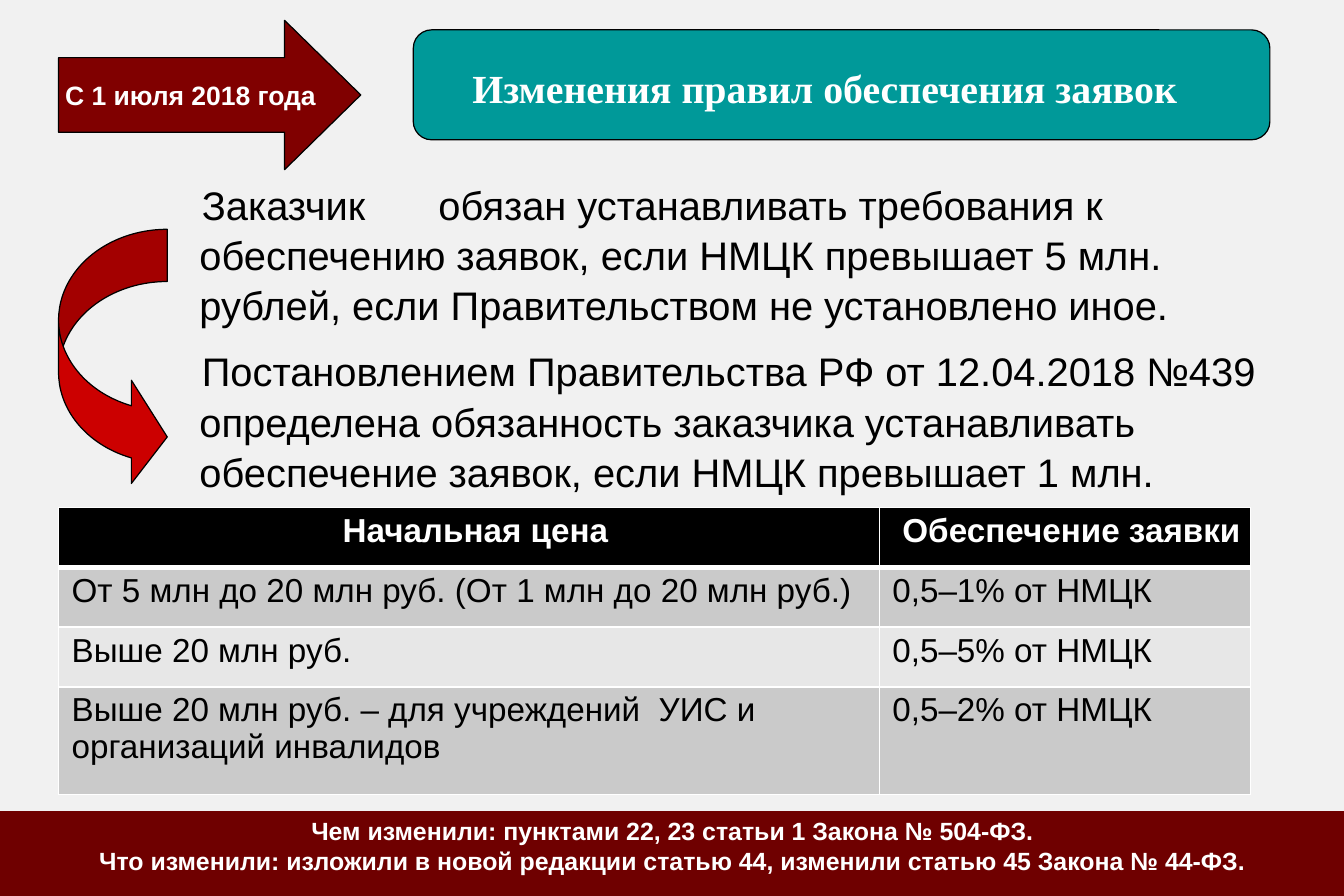
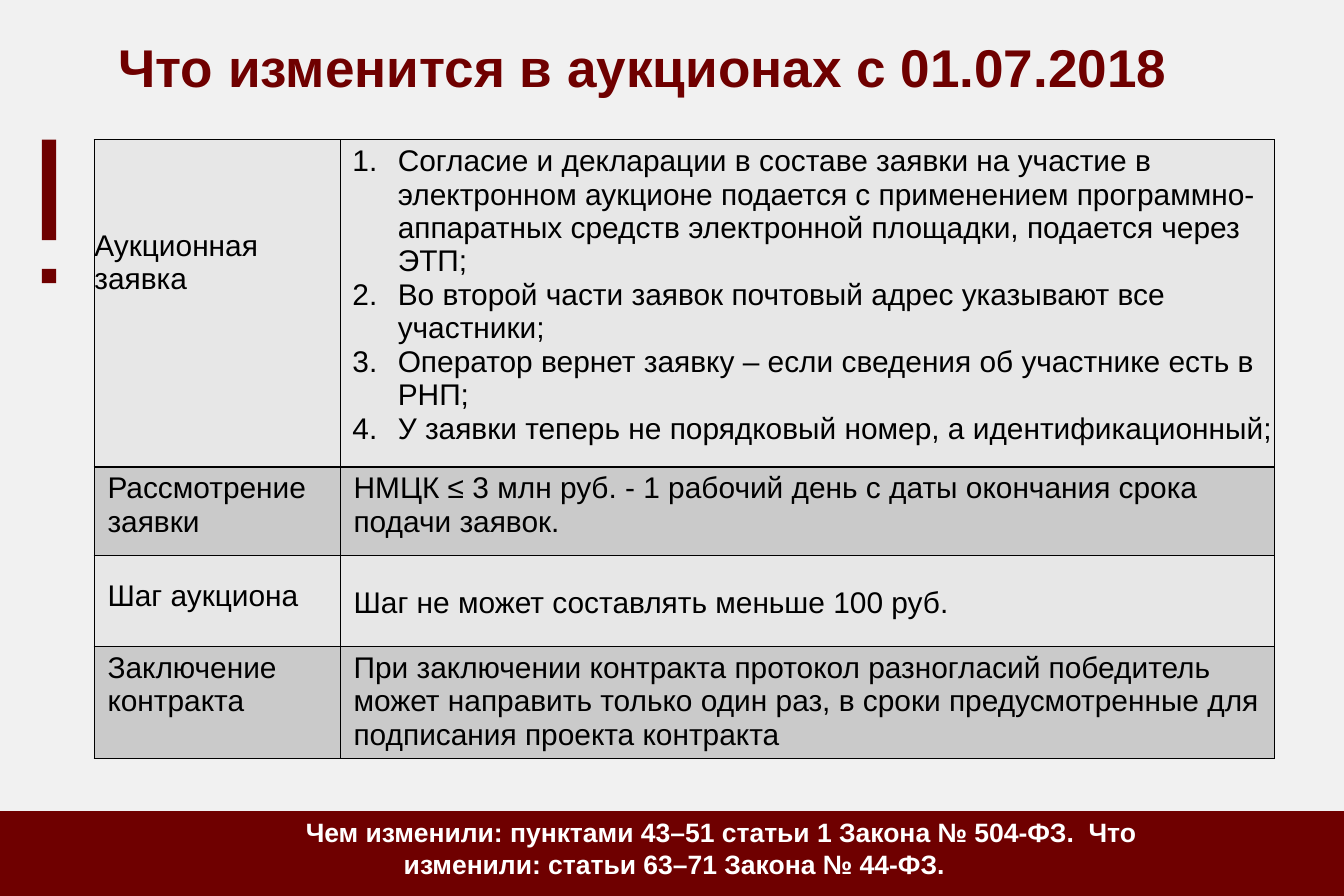
from dataclasses import dataclass, field

from lxml.etree import SubElement
from pptx import Presentation
from pptx.dml.color import RGBColor
from pptx.enum.shapes import MSO_SHAPE
from pptx.enum.text import MSO_ANCHOR, PP_ALIGN
from pptx.oxml.ns import qn
from pptx.util import Inches, Pt

COLORS = {
    "background": "F1F1F1",
    "maroon": "6F0000",
    "arrow": "800000",
    "curve": "CC0000",
    "teal": "009999",
    "dark_row": "CACACA",
    "light_row": "E7E7E7",
    "black": "000000",
    "white": "FFFFFF",
}
SLIDE_WIDTH, SLIDE_HEIGHT = 11.25, 7.5
BAND_TOP = 6.79
TAB_SPACING = 1


@dataclass(frozen=True)
class TextStyle:
    """Sizes and spacings are in points, indents and tabs in inches."""
    size: float
    color: str = "black"
    bold: bool = False
    font: str = "Arial"
    align: PP_ALIGN = PP_ALIGN.LEFT
    left: float = 0
    first_line: float = 0
    line_spacing: float | None = None
    space_before: float = 0
    tab: float | None = None
    numbered: bool = False


@dataclass(frozen=True)
class Box:
    left: float
    top: float
    width: float
    height: float

    def lengths(self) -> list:
        return [Inches(value) for value in (self.left, self.top, self.width, self.height)]


@dataclass(frozen=True)
class Cell:
    lines: list[str]
    style: TextStyle
    fill: str
    top_inset: float = 0.04
    anchor: MSO_ANCHOR = MSO_ANCHOR.TOP
    thick_sides: str = ""


@dataclass(frozen=True)
class Grid:
    box: Box
    columns: list[float]
    rows: list[float]
    border: str
    cells: list[list[Cell]] = field(default_factory=list)


BAND_CENTERED = TextStyle(15, "white", True, align=PP_ALIGN.CENTER)
BAND_HANGING = TextStyle(16, "white", True, left=0.83, first_line=-0.82)
BODY = TextStyle(24, left=0.26, first_line=0.02, line_spacing=30.2, space_before=10, tab=2.31)
TITLE = TextStyle(32, "maroon", True, left=0.2)
ARROW_LABEL = TextStyle(16, "white", True, align=PP_ALIGN.CENTER)
HEADING = TextStyle(24, "white", True, "Times New Roman", PP_ALIGN.CENTER)
PRICE_HEADER = TextStyle(20, "white", True, align=PP_ALIGN.CENTER, left=0.11)
PRICE = TextStyle(20, left=0.11)
AUCTION = TextStyle(18, left=0.11)
AUCTION_FLUSH = TextStyle(18)
AUCTION_LIST = TextStyle(18, left=0.48, first_line=-0.38, numbered=True)


def rgb(name: str) -> RGBColor:
    return RGBColor.from_string(COLORS[name])


def write_lines(text_frame, lines: list[str], style: TextStyle) -> None:
    """Put one paragraph per line into the frame, all in one style."""
    text_frame.text = "\n".join(lines)
    for paragraph in text_frame.paragraphs:
        paragraph.alignment = style.align
        properties = paragraph._p.get_or_add_pPr()
        properties.set("marL", str(Inches(style.left)))
        properties.set("indent", str(Inches(style.first_line)))
        if style.numbered:
            SubElement(properties, qn("a:buFont"), typeface="+mj-lt")
            SubElement(properties, qn("a:buAutoNum"), type="arabicPeriod")
        if style.tab:
            properties.set("defTabSz", str(Inches(TAB_SPACING)))
            tabs = SubElement(properties, qn("a:tabLst"))
            SubElement(tabs, qn("a:tab"), pos=str(Inches(style.tab)), algn="l")
        if style.line_spacing:
            paragraph.line_spacing = Pt(style.line_spacing)
        paragraph.space_before = Pt(style.space_before)
        for run in paragraph.runs:
            run.font.name = style.font
            run.font.size = Pt(style.size)
            run.font.bold = style.bold
            run.font.color.rgb = rgb(style.color)


def add_text(slide, box: Box, lines: list[str], style: TextStyle, top_inset: float = 0) -> None:
    text_frame = slide.shapes.add_textbox(*box.lengths()).text_frame
    text_frame.word_wrap = True
    text_frame.margin_left = text_frame.margin_right = text_frame.margin_bottom = 0
    text_frame.margin_top = Inches(top_inset)
    write_lines(text_frame, lines, style)


def add_figure(slide, kind: MSO_SHAPE, box: Box, fill: str, outlined: bool = False,
               adjustments: tuple[float, ...] = ()):
    shape = slide.shapes.add_shape(kind, *box.lengths())
    shape.shadow.inherit = False
    shape.fill.solid()
    shape.fill.fore_color.rgb = rgb(fill)
    if outlined:
        shape.line.color.rgb = rgb("black")
        shape.line.width = Pt(0.75)
    else:
        shape.line.fill.background()
    for index, value in enumerate(adjustments):
        shape.adjustments[index] = value
    return shape


def add_band(slide, box: Box, lines: list[str], style: TextStyle) -> None:
    """Draw the bottom band with the note on the amended law."""
    band = Box(0, BAND_TOP, SLIDE_WIDTH, SLIDE_HEIGHT - BAND_TOP)
    add_figure(slide, MSO_SHAPE.RECTANGLE, band, "maroon")
    add_text(slide, box, lines, style, top_inset=0.01)


def set_borders(table_cell, color: str, thick_sides: str) -> None:
    properties = table_cell._tc.get_or_add_tcPr()
    for side in "LRTB":
        width = Pt(3 if side in thick_sides else 1)
        line = SubElement(properties, qn(f"a:ln{side}"), w=str(width))
        fill = SubElement(line, qn("a:solidFill"))
        SubElement(fill, qn("a:srgbClr"), val=COLORS[color])


def add_grid(slide, grid: Grid) -> None:
    frame = slide.shapes.add_table(len(grid.rows), len(grid.columns), *grid.box.lengths())
    table = frame.table
    table.first_row = table.horz_banding = False
    for column, width in zip(table.columns, grid.columns):
        column.width = Inches(width)
    for row, height, cells in zip(table.rows, grid.rows, grid.cells):
        row.height = Inches(height)
        for table_cell, cell in zip(row.cells, cells):
            set_borders(table_cell, grid.border, cell.thick_sides)
            table_cell.fill.solid()
            table_cell.fill.fore_color.rgb = rgb(cell.fill)
            table_cell.margin_left = table_cell.margin_right = table_cell.margin_bottom = 0
            table_cell.margin_top = Inches(cell.top_inset)
            table_cell.vertical_anchor = cell.anchor
            write_lines(table_cell.text_frame, cell.lines, cell.style)


def build_security_slide(slide) -> None:
    add_text(slide, Box(1.41, 1.42, 9.42, 2.73), [
        "Заказчик\tобязан устанавливать требования к обеспечению заявок, если НМЦК "
        "превышает 5 млн. рублей, если Правительством не установлено иное.",
        "Постановлением Правительства РФ от 12.04.2018 №439 определена обязанность "
        "заказчика устанавливать обеспечение заявок, если НМЦК превышает 1 млн.",
    ], BODY, top_inset=0.07)
    add_band(slide, Box(0.75, 6.82, 9.76, 0.51), [
        "Чем изменили: пунктами 22, 23 статьи 1 Закона № 504-ФЗ.",
        "Что изменили: изложили в новой редакции статью 44, изменили статью 45 Закона № 44-ФЗ.",
    ], BAND_CENTERED)

    prices = [
        ("От 5 млн до 20 млн руб. (От 1 млн до 20 млн руб.)", "0,5–1% от НМЦК"),
        ("Выше 20 млн руб.", "0,5–5% от НМЦК"),
        ("Выше 20 млн руб. – для учреждений  УИС и организаций инвалидов", "0,5–2% от НМЦК"),
    ]
    header = [Cell([text], PRICE_HEADER, "black", thick_sides="B")
              for text in ("Начальная цена", "Обеспечение заявки")]
    rows = [[Cell([text], PRICE, "light_row" if index % 2 else "dark_row",
                  thick_sides="" if index else "T") for text in texts]
            for index, texts in enumerate(prices)]
    add_grid(slide, Grid(Box(0.49, 4.25, 9.98, 2.4), [6.87, 3.11], [0.5, 0.5, 0.5, 0.9],
                         "white", [header, *rows]))

    date_arrow = add_figure(slide, MSO_SHAPE.RIGHT_ARROW, Box(0.49, 0.17, 2.53, 1.25),
                            "arrow", True, (0.5, 0.51))
    date_arrow.text_frame.word_wrap = False
    write_lines(date_arrow.text_frame, ["С 1 июля 2018 года"], ARROW_LABEL)
    heading = add_figure(slide, MSO_SHAPE.ROUNDED_RECTANGLE, Box(3.46, 0.25, 7.17, 0.92),
                         "teal", True)
    heading.text_frame.margin_right = Inches(0.38)
    heading.text_frame.margin_top = Inches(0.1)
    write_lines(heading.text_frame, ["Изменения правил обеспечения заявок"], HEADING)
    add_figure(slide, MSO_SHAPE.CURVED_RIGHT_ARROW, Box(0.49, 1.92, 0.91, 2.17),
               "curve", True, (0.48, 0.95, 0.33))


def build_auction_slide(slide) -> None:
    add_text(slide, Box(0.79, 0.29, 9.85, 0.52), ["Что изменится в аукционах с 01.07.2018"], TITLE)
    add_band(slide, Box(2.55, 6.82, 7.24, 0.55), [
        "Чем изменили: пунктами 43–51 статьи 1 Закона № 504-ФЗ.  "
        "Что изменили: статьи 63–71 Закона № 44-ФЗ.",
    ], BAND_HANGING)
    for top, height in ((1.17, 0.84), (2.25, 0.12)):
        add_figure(slide, MSO_SHAPE.RECTANGLE, Box(0.35, top, 0.12, height), "maroon")

    cells = [
        [Cell(["Аукционная", "заявка"], AUCTION_FLUSH, "light_row", top_inset=0.75),
         Cell([
             "Согласие и декларации в составе заявки на участие в электронном аукционе "
             "подается с применением программно-аппаратных средств электронной площадки, "
             "подается через ЭТП;",
             "Во второй части заявок почтовый адрес указывают все участники;",
             "Оператор вернет заявку – если сведения об участнике есть в РНП;",
             "У заявки теперь не порядковый номер, а идентификационный;",
         ], AUCTION_LIST, "light_row")],
        [Cell(["Рассмотрение", "заявки"], AUCTION, "dark_row"),
         Cell(["НМЦК ≤ 3 млн руб. - 1 рабочий день с даты окончания срока подачи заявок."],
              AUCTION, "dark_row")],
        [Cell(["Шаг аукциона"], AUCTION, "light_row", top_inset=0.2),
         Cell(["Шаг не может составлять меньше 100 руб."], AUCTION, "light_row",
              anchor=MSO_ANCHOR.MIDDLE)],
        [Cell(["Заключение контракта"], AUCTION, "dark_row"),
         Cell(["При заключении контракта протокол разногласий победитель может направить "
               "только один раз, в сроки предусмотренные для подписания проекта контракта"],
              AUCTION, "dark_row")],
    ]
    add_grid(slide, Grid(Box(0.79, 1.17, 9.88, 5.18), [2.06, 7.82], [2.74, 0.74, 0.76, 0.94],
                         "black", cells))


def main() -> None:
    presentation = Presentation()
    presentation.slide_width = Inches(SLIDE_WIDTH)
    presentation.slide_height = Inches(SLIDE_HEIGHT)
    background = presentation.slide_master.background.fill
    background.solid()
    background.fore_color.rgb = rgb("background")
    blank_layout = presentation.slide_layouts[6]
    for build in (build_security_slide, build_auction_slide):
        build(presentation.slides.add_slide(blank_layout))
    presentation.save("out.pptx")


if __name__ == "__main__":
    main()
